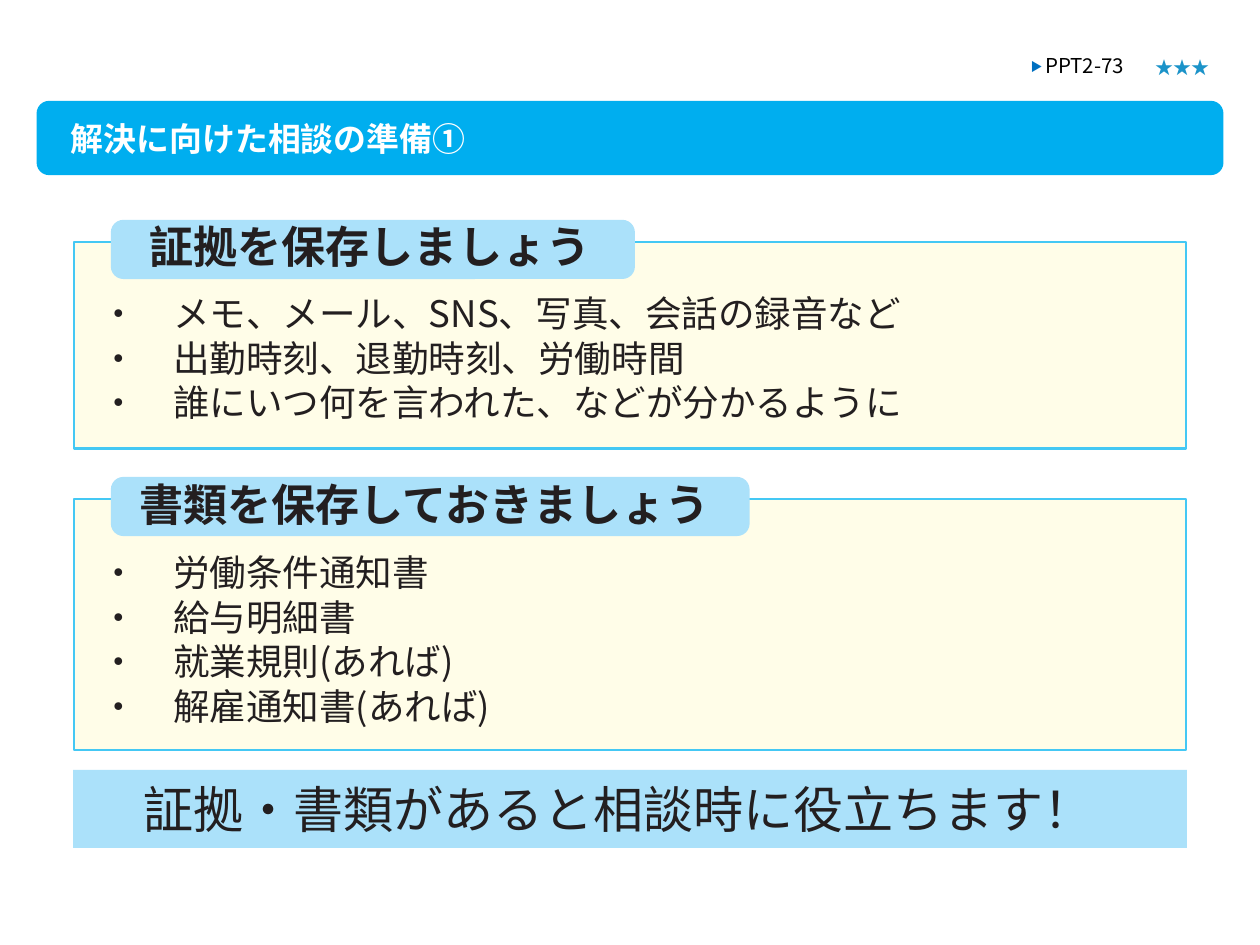
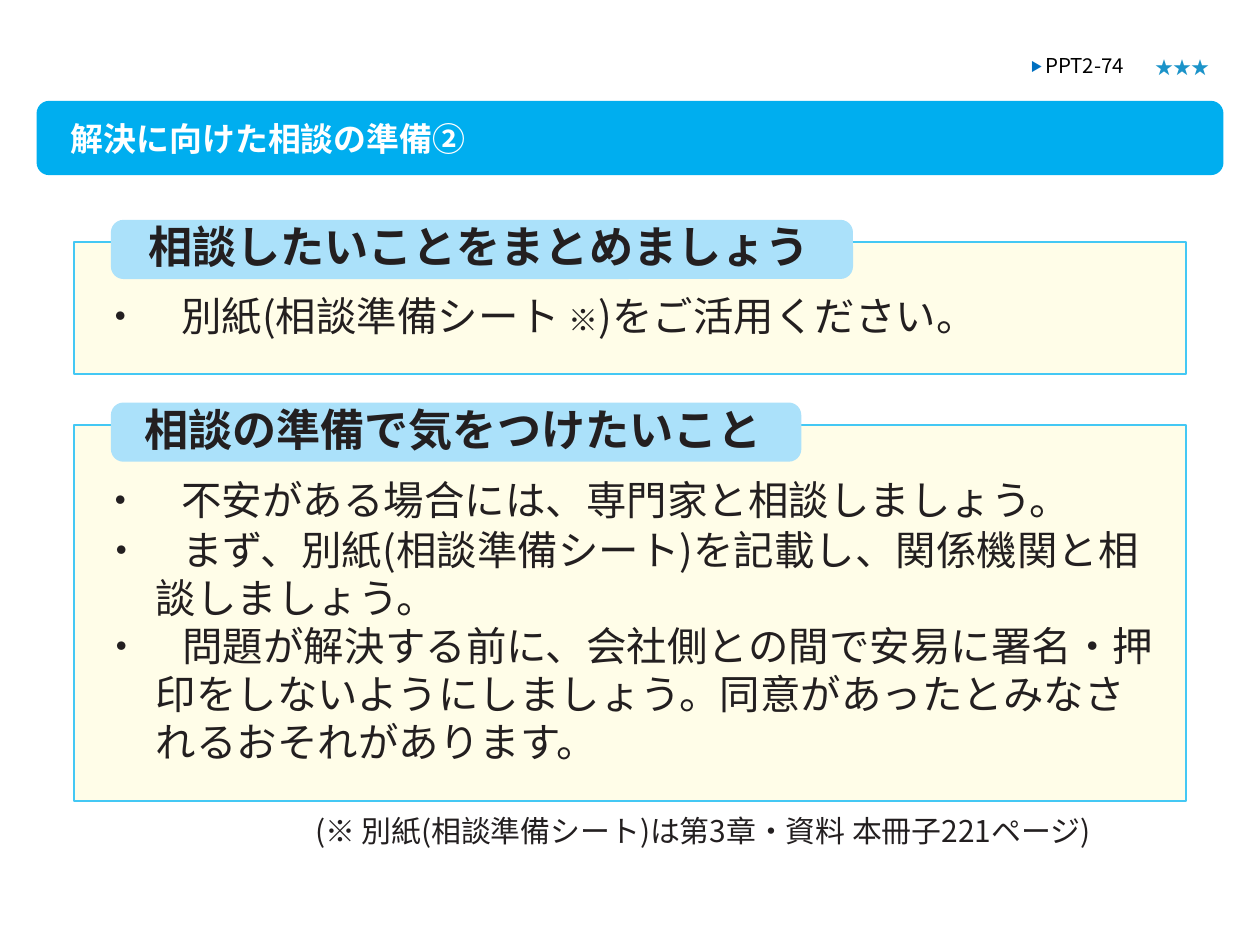
import dataclasses

import lxml.etree
import pptx
import pptx.dml.color
import pptx.enum.shapes
import pptx.enum.text
import pptx.oxml.ns
import pptx.util

Kind = pptx.enum.shapes.MSO_SHAPE


@dataclasses.dataclass(frozen=True)
class Theme:
    font: str = "Noto Sans CJK JP"
    band: str = "00AEEF"
    tab: str = "ABE1FA"
    panel: str = "FFFDE8"
    edge: str = "44C8F4"
    ink: str = "231F20"
    white: str = "FFFFFF"
    black: str = "000000"
    mark: str = "0070C0"
    star: str = "1B93C9"
    title: float = 18.8
    head: float = 25.2
    item: float = 20.9
    large: float = 23.1
    note: float = 17.1
    call: float = 28.6
    code: float = 11.7
    rank: float = 10.3


@dataclasses.dataclass
class Run:
    text: str
    size: float
    color: str = Theme.ink
    bold: bool = False
    base: int = 0


@dataclasses.dataclass
class Para:
    runs: list
    left: float = 0.1
    hang: float = 0
    space: float = 0
    line: float = 0


class Deck:
    """Draw styled elements on the current slide, on a grid of 100 columns by 75 rows."""

    def __init__(self, theme):
        self.theme = theme
        self.file = pptx.Presentation()
        self.file.slide_width = pptx.util.Inches(10)
        self.file.slide_height = pptx.util.Inches(7.5)
        self.col = self.file.slide_width / 100
        self.row = self.file.slide_height / 75
        self.slide = None

    def place(self, x, y, w, h):
        return int(x * self.col), int(y * self.row), int(w * self.col), int(h * self.row)

    def tint(self, color):
        return pptx.dml.color.RGBColor.from_string(color)

    def block(self, kind, area, fill, edge=None):
        shape = self.slide.shapes.add_shape(kind, *self.place(*area))
        shape.shadow.inherit = False
        shape.fill.solid()
        shape.fill.fore_color.rgb = self.tint(fill)
        if edge:
            shape.line.color.rgb = self.tint(edge)
            shape.line.width = pptx.util.Pt(1.25)
        else:
            shape.line.fill.background()
        return shape

    def rounded(self, area, fill):
        shape = self.block(Kind.ROUNDED_RECTANGLE, area, fill)
        shape.adjustments[0] = 1 / area[3]

    def fill_text(self, frame, paras, top=0):
        frame.word_wrap = True
        frame.vertical_anchor = pptx.enum.text.MSO_ANCHOR.TOP
        frame.margin_left = frame.margin_right = frame.margin_bottom = 0
        frame.margin_top = int(top * self.row)
        for count, para in enumerate(paras):
            spot = frame.add_paragraph() if count else frame.paragraphs[0]
            spot.alignment = pptx.enum.text.PP_ALIGN.LEFT
            spot.space_before = pptx.util.Pt(para.space)
            if para.line:
                spot.line_spacing = pptx.util.Pt(para.line)
            props = spot._p.get_or_add_pPr()
            props.set("marL", str(int(para.left * self.col)))
            props.set("indent", str(int(para.hang * self.col)))
            for run in para.runs:
                self.add_run(spot, run)

    def add_run(self, spot, run):
        piece = spot.add_run()
        piece.text = run.text
        font = piece.font
        font.size = pptx.util.Pt(run.size)
        font.bold = run.bold
        font.color.rgb = self.tint(run.color)
        font.name = self.theme.font
        props = piece._r.get_or_add_rPr()
        east = lxml.etree.SubElement(props, pptx.oxml.ns.qn("a:ea"))
        east.set("typeface", self.theme.font)
        if run.base:
            props.set("baseline", str(run.base * 1000))

    def text(self, area, paras):
        box = self.slide.shapes.add_textbox(*self.place(*area))
        self.fill_text(box.text_frame, paras)

    def start(self, title, code):
        look = self.theme
        self.slide = self.file.slides.add_slide(self.file.slide_layouts[6])
        self.rounded((2.9, 8, 94.2, 5.9), look.band)
        self.text((5.5, 9.4, 40.6, 3.1),
                  [Para([Run(title, look.title, look.white, True)])])
        self.text((81.7, 4.2, 9.9, 2),
                  [Para([Run("▶ ", look.code, look.mark, base=9),
                         Run(code, look.code, look.black)])])
        self.text((91.7, 4.5, 6, 1.7),
                  [Para([Run("★★★", look.rank, look.star)], left=0)])

    def section(self, top, height, width, title, inset, items):
        look = self.theme
        peak = top - 1.75
        self.block(Kind.RECTANGLE, (5.9, top, 88.2, height), look.panel, look.edge)
        self.rounded((8.8, peak, width, 4.7), look.tab)
        head = Para([Run(title, look.head, bold=True)], left=inset)
        self.text((7.85, peak, 83.95, height), [head, *items])

    def banner(self, words):
        shape = self.block(Kind.RECTANGLE, (5.8, 61.1, 88.4, 6.2), self.theme.tab)
        self.fill_text(shape.text_frame,
                       [Para([Run(words, self.theme.call)], left=5.6)], top=0.7)

    def note(self, words):
        self.text((5.7, 64.5, 92.2, 3),
                  [Para([Run(words, self.theme.note)], left=19.3)])

    def items(self, lines, first):
        return [Para([Run("・\u3000" + line, self.theme.item)],
                     space=0.3 if count else first)
                for count, line in enumerate(lines)]


def main():
    look = Theme()
    deck = Deck(look)

    deck.start("解決に向けた相談の準備①", "PPT2-73")
    deck.section(19.2, 16.4, 41.6, "証拠を保存しましょう", 4, deck.items([
        "メモ、メール、SNS、写真、会話の録音など",
        "出勤時刻、退勤時刻、労働時間",
        "誰にいつ何を言われた、などが分かるように",
    ], 10.6))
    deck.section(39.6, 19.9, 50.7, "書類を保存しておきましょう", 3.2, deck.items([
        "労働条件通知書",
        "給与明細書",
        "就業規則(あれば)",
        "解雇通知書(あれば)",
    ], 11.7))
    deck.banner("証拠・書類があると相談時に役立ちます！")

    deck.start("解決に向けた相談の準備②", "PPT2-74")
    deck.section(19.2, 10.5, 58.9, "相談したいことをまとめましょう", 3.9, [
        Para([Run("・\u3000別紙(相談準備シート ", look.large),
              Run("※", look.note),
              Run(")をご活用ください。", look.large)], space=10.3),
    ])
    deck.section(33.7, 29.9, 54.8, "相談の準備で気をつけたいこと", 3.6, [
        Para([Run("・\u3000" + words, look.large)], left, hang, space, 27.5)
        for words, left, hang, space in [
            ("不安がある場合には、専門家と相談しましょう。", 0.1, 0, 11.4),
            ("まず、別紙(相談準備シート)を記載し、関係機関と相談しましょう。",
             4.5, -4.3, 1),
            ("問題が解決する前に、会社側との間で安易に署名・押印をしないように"
             "しましょう。同意があったとみなされるおそれがあります。",
             4.5, -4.3, 0.1),
        ]
    ])
    deck.note("(※ 別紙(相談準備シート)は第3章・資料 本冊子221ページ)")

    deck.file.save("out.pptx")


if __name__ == "__main__":
    main()
